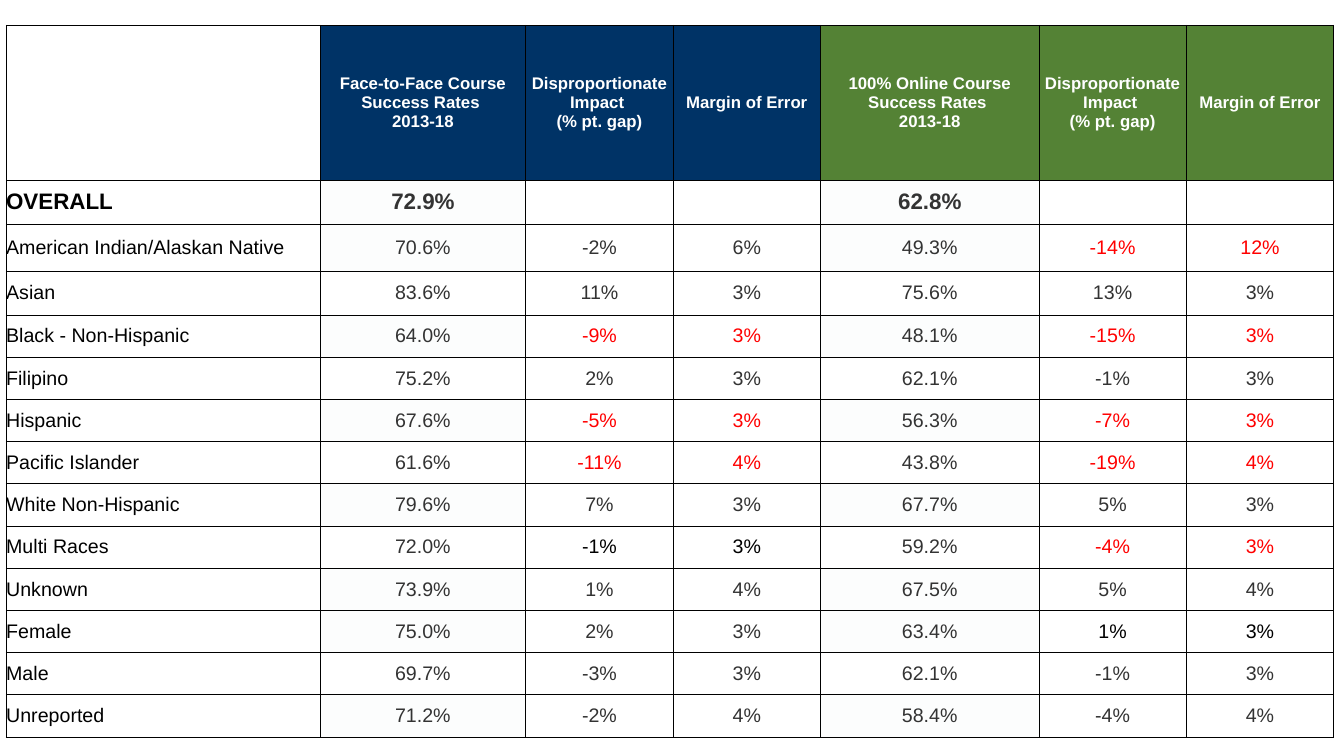
from lxml.etree import SubElement
from pptx import Presentation
from pptx.dml.color import RGBColor
from pptx.enum.text import MSO_ANCHOR, PP_ALIGN
from pptx.oxml.ns import qn
from pptx.util import Pt

WHITE = RGBColor(0xFF, 0xFF, 0xFF)
BLACK = RGBColor(0, 0, 0)
GREY = RGBColor(0x33, 0x33, 0x33)
RED = RGBColor(0xFF, 0, 0)
NAVY = RGBColor(0, 0x33, 0x66)
GREEN = RGBColor(0x54, 0x82, 0x35)
TINT = RGBColor(0xFC, 0xFD, 0xFD)

FONT = "Arial"
COLS = [224.2, 147, 105.3, 105.3, 156, 105.3, 105.3]
ROWS = [110.7, 31.4, 33.6, 31.4] + [30.14] * 10

# Both course types share the last two headings
GAP = ["Disproportionate Impact ", "(% pt. gap)"]
ERROR = ["Margin of Error"]
HEADS = [
    (["Face-to-Face Course Success Rates ", "2013-18"], NAVY),
    (GAP, NAVY),
    (ERROR, NAVY),
    (["100% Online Course Success Rates ", "2013-18"], GREEN),
    (GAP, GREEN),
    (ERROR, GREEN),
]

# Group, values, tone of each gap and error pair, fill of the rate cells
DATA = [
    ("OVERALL", ["72.9%", "", "", "62.8%", "", ""], GREY, GREY, TINT),
    ("American Indian/Alaskan Native",
     ["70.6%", "-2%", "6%", "49.3%", "-14%", "12%"], GREY, RED, TINT),
    ("Asian", ["83.6%", "11%", "3%", "75.6%", "13%", "3%"], GREY, GREY, WHITE),
    ("Black - Non-Hispanic",
     ["64.0%", "-9%", "3%", "48.1%", "-15%", "3%"], RED, RED, TINT),
    ("Filipino", ["75.2%", "2%", "3%", "62.1%", "-1%", "3%"], GREY, GREY, WHITE),
    ("Hispanic", ["67.6%", "-5%", "3%", "56.3%", "-7%", "3%"], RED, RED, TINT),
    ("Pacific Islander",
     ["61.6%", "-11%", "4%", "43.8%", "-19%", "4%"], RED, RED, WHITE),
    ("White Non-Hispanic",
     ["79.6%", "7%", "3%", "67.7%", "5%", "3%"], GREY, GREY, TINT),
    ("Multi Races", ["72.0%", "-1%", "3%", "59.2%", "-4%", "3%"], BLACK, RED, WHITE),
    ("Unknown", ["73.9%", "1%", "4%", "67.5%", "5%", "4%"], GREY, GREY, TINT),
    ("Female", ["75.0%", "2%", "3%", "63.4%", "1%", "3%"], GREY, BLACK, TINT),
    ("Male", ["69.7%", "-3%", "3%", "62.1%", "-1%", "3%"], GREY, GREY, WHITE),
    ("Unreported", ["71.2%", "-2%", "4%", "58.4%", "-4%", "4%"], GREY, GREY, TINT),
]


def frame(cell):
    """Draw a thin black border on all four sides."""
    props = cell._tc.get_or_add_tcPr()
    for side in ("lnL", "lnR", "lnT", "lnB"):
        line = SubElement(props, qn("a:" + side), w=str(int(Pt(0.5))))
        fill = SubElement(line, qn("a:solidFill"))
        SubElement(fill, qn("a:srgbClr"), val=str(BLACK))


def write(cell, lines, fill, tone, size, bold=False, align=PP_ALIGN.CENTER):
    """Style a cell and fill it with one paragraph per line."""
    frame(cell)
    cell.fill.solid()
    cell.fill.fore_color.rgb = fill
    cell.vertical_anchor = MSO_ANCHOR.MIDDLE
    cell.margin_left = cell.margin_right = 0
    cell.margin_top = cell.margin_bottom = 0
    text = cell.text_frame
    for i, line in enumerate(lines):
        para = text.add_paragraph() if i else text.paragraphs[0]
        para.alignment = align
        if not line:
            continue
        run = para.add_run()
        run.text = line
        font = run.font
        font.name, font.size, font.bold = FONT, Pt(size), bold
        font.color.rgb = tone


def add_rates(slide, left, top, width, height):
    """Place the success rate table in the given box."""
    table = slide.shapes.add_table(
        len(ROWS), len(COLS), Pt(left), Pt(top), Pt(width), Pt(height)).table
    for col, share in zip(table.columns, COLS):
        col.width = Pt(width * share / sum(COLS))
    for row, share in zip(table.rows, ROWS):
        row.height = Pt(height * share / sum(ROWS))

    # Heading row
    write(table.cell(0, 0), [""], WHITE, BLACK, 12)
    for c, (lines, fill) in enumerate(HEADS, 1):
        write(table.cell(0, c), lines, fill, WHITE, 12, True)

    # One row per group, the overall row larger and bold
    for r, (group, values, face, online, tint) in enumerate(DATA, 1):
        bold = r == 1
        size = 16 if bold else 14
        write(table.cell(r, 0), [group], WHITE, BLACK, size, bold, PP_ALIGN.LEFT)
        tones = [GREY, face, face, GREY, online, online]
        fills = [tint, WHITE, WHITE] * 2
        for c, (value, fill, tone) in enumerate(zip(values, fills, tones), 1):
            write(table.cell(r, c), [value], fill, tone, size, bold)


def main():
    deck = Presentation()
    deck.slide_width, deck.slide_height = Pt(960), Pt(540)
    slide = deck.slides.add_slide(deck.slide_layouts[6])
    add_rates(slide, 4.4, 18, sum(COLS), sum(ROWS))
    deck.save("out.pptx")


if __name__ == "__main__":
    main()
